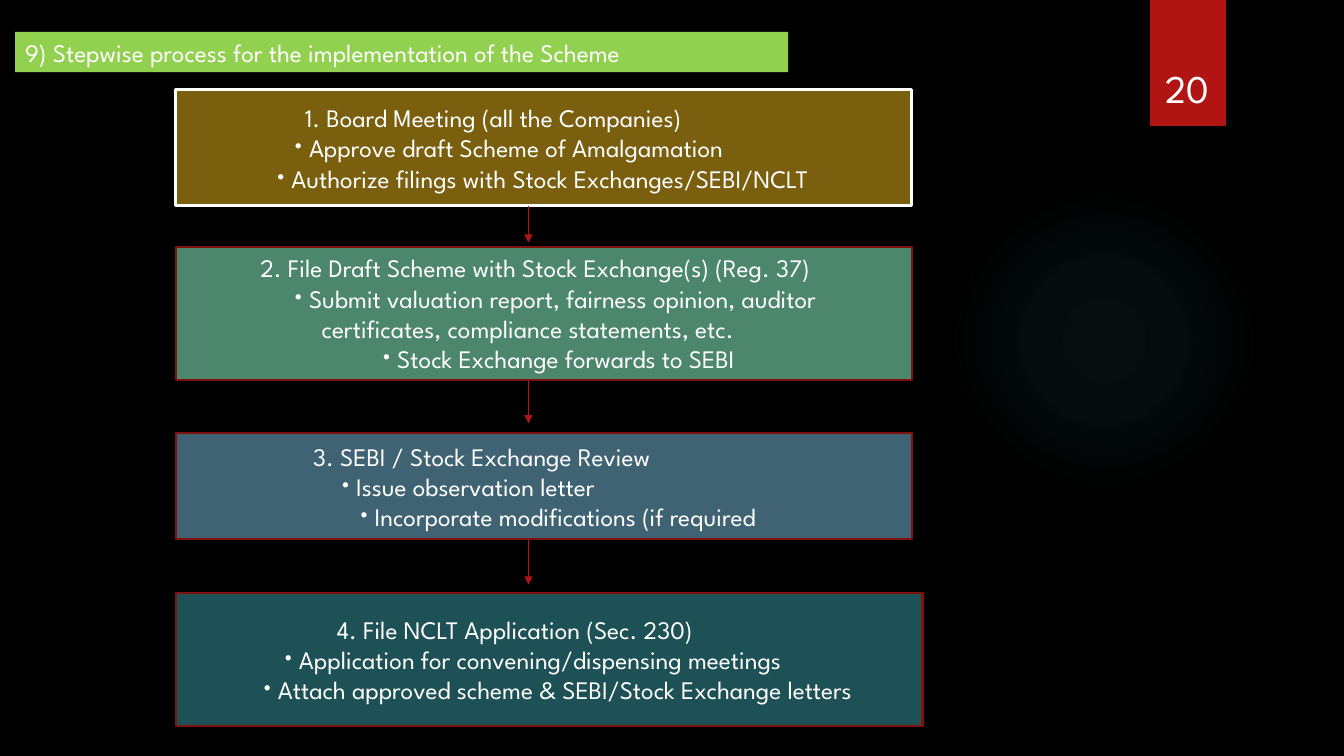
from dataclasses import dataclass

from lxml import etree
from pptx import Presentation
from pptx import util as u
from pptx.dml.color import RGBColor
from pptx.enum import shapes, text
from pptx.oxml import parse_xml
from pptx.oxml.ns import nsdecls, qn

FONT = "League Spartan"
WHITE, RED, MAROON = "FFFFFF", "B01513", "82100E"
HANG = 0.2

deck = Presentation()
deck.slide_width, deck.slide_height = u.Inches(13.33), u.Inches(7.5)
CELL = deck.slide_height / 9  # grid of 16 columns by 9 rows


@dataclass
class Line:
    words: str
    indent: float
    dot: bool = True


@dataclass
class Step:
    top: float
    high: float
    fill: str
    lines: list[Line]
    tip: float = 0  # row where the arrow below ends; 0 for no arrow
    wide: float = 8.76
    edge: str = MAROON
    weight: float = 1.5


STEPS = [
    Step(1.07, 1.38, "795F0E", [
        Line("1. Board Meeting (all the Companies)", 1.42, False),
        Line("Approve draft Scheme of Amalgamation", 1.47),
        Line("Authorize filings with Stock Exchanges/SEBI/NCLT", 1.26),
    ], tip=2.89, edge=WHITE, weight=2.25),
    Step(2.94, 1.58, "4B866D", [
        Line("2. File Draft Scheme with Stock Exchange(s) (Reg. 37)", 0.89, False),
        Line("Submit valuation report, fairness opinion, auditor", 1.47),
        Line("certificates, compliance statements, etc.", 1.62, False),
        Line("Stock Exchange forwards to SEBI", 2.52),
    ], tip=5.04),
    Step(5.16, 1.26, "3F6373", [
        Line("3. SEBI / Stock Exchange Review", 1.52, False),
        Line("Issue observation letter", 2.03),
        Line("Incorporate modifications (if required", 2.25),
    ], tip=6.96),
    Step(7.06, 1.58, "1E5155", [
        Line("4. File NCLT Application (Sec. 230)", 1.8, False),
        Line("Application for convening/dispensing meetings", 1.35),
        Line("Attach approved scheme & SEBI/Stock Exchange letters", 1.1),
    ], wide=8.89),
]


def grid(*cells: float) -> list[int]:
    return [round(c * CELL) for c in cells]


def tint(target, code: str) -> None:
    """Make a fill solid, or colour a font."""
    if hasattr(target, "solid"):
        target.solid()
        target.fore_color.rgb = RGBColor.from_string(code)
    else:
        target.color.rgb = RGBColor.from_string(code)


def style(para, size: float, align=text.PP_ALIGN.LEFT) -> None:
    para.alignment = align
    for run in para.runs:
        run.font.name, run.font.size = FONT, u.Pt(size)
        tint(run.font, WHITE)


def block(slide, kind, *cells: float):
    shape = slide.shapes.add_shape(kind, *grid(*cells))
    shape.shadow.inherit = False
    shape.line.fill.background()
    return shape


def glow(slide) -> None:
    disc = block(slide, shapes.MSO_SHAPE.OVAL, 11.29, 2.2, 3.7, 3.7)
    stops = "".join(
        f'<a:gs pos="{pos}000"><a:srgbClr val="50B9C1">'
        f'<a:alpha val="{alpha}000"/></a:srgbClr></a:gs>'
        for pos, alpha in ((0, 7), (36, 6), (69, 0)))
    fill = parse_xml(
        f'<a:gradFill {nsdecls("a")}><a:gsLst>{stops}</a:gsLst>'
        '<a:path path="circle"><a:fillToRect l="50000" t="50000" '
        'r="50000" b="50000"/></a:path></a:gradFill>')
    disc.element.spPr.find(qn("a:prstGeom")).addnext(fill)


def head(slide) -> None:
    title = slide.shapes.title
    title.left, title.top, title.width, title.height = grid(0.18, 0.38, 9.2, 0.48)
    tint(title.fill, "92D050")
    frame = title.text_frame
    frame.text = "9) Stepwise process for the implementation of the Scheme"
    frame.auto_size = text.MSO_AUTO_SIZE.NONE
    frame.vertical_anchor = text.MSO_ANCHOR.TOP
    style(frame.paragraphs[0], 18)


def badge(slide) -> None:
    tab = block(slide, shapes.MSO_SHAPE.RECTANGLE, 13.69, 0, 0.9, 1.5)
    tint(tab.fill, RED)
    frame = slide.shapes.add_textbox(*grid(13.58, 0.38, 1.1, 1.01)).text_frame
    frame.word_wrap = True
    frame.vertical_anchor = text.MSO_ANCHOR.BOTTOM
    frame.text = "20"
    style(frame.paragraphs[0], 28, text.PP_ALIGN.CENTER)


def indent(para, line: Line) -> None:
    props = para._p.get_or_add_pPr()
    props.set("marL", str(grid(line.indent)[0]))
    if line.dot:
        props.set("indent", str(-grid(HANG)[0]))
        etree.SubElement(props, qn("a:buFont"), typeface=FONT)
        etree.SubElement(props, qn("a:buChar"), char="•")


def arrow(slide, start: float, end: float) -> None:
    left, top, right, low = grid(6.29, start, 6.29, end)
    link = slide.shapes.add_connector(
        shapes.MSO_CONNECTOR.STRAIGHT, left, top, right, low)
    link.line.width = u.Pt(0.75)
    tint(link.line.fill, RED)
    etree.SubElement(link.line._get_or_add_ln(), qn("a:tailEnd"), type="triangle")
    etree.SubElement(link._element.spPr, qn("a:effectLst"))


def draw(slide, step: Step) -> None:
    box = block(slide, shapes.MSO_SHAPE.RECTANGLE,
                2.09, step.top, step.wide, step.high)
    tint(box.fill, step.fill)
    tint(box.line.fill, step.edge)
    box.line.width = u.Pt(step.weight)
    frame = box.text_frame
    frame.vertical_anchor = text.MSO_ANCHOR.MIDDLE
    frame.text = "\n".join(line.words for line in step.lines)
    for para, line in zip(frame.paragraphs, step.lines):
        indent(para, line)
        style(para, 18)
    if step.tip:
        arrow(slide, step.top + step.high, step.tip)


def main() -> None:
    slide = deck.slides.add_slide(deck.slide_layouts[5])
    tint(slide.background.fill, "000000")
    glow(slide)
    badge(slide)
    head(slide)
    for step in STEPS:
        draw(slide, step)
    deck.save("out.pptx")


if __name__ == "__main__":
    main()
